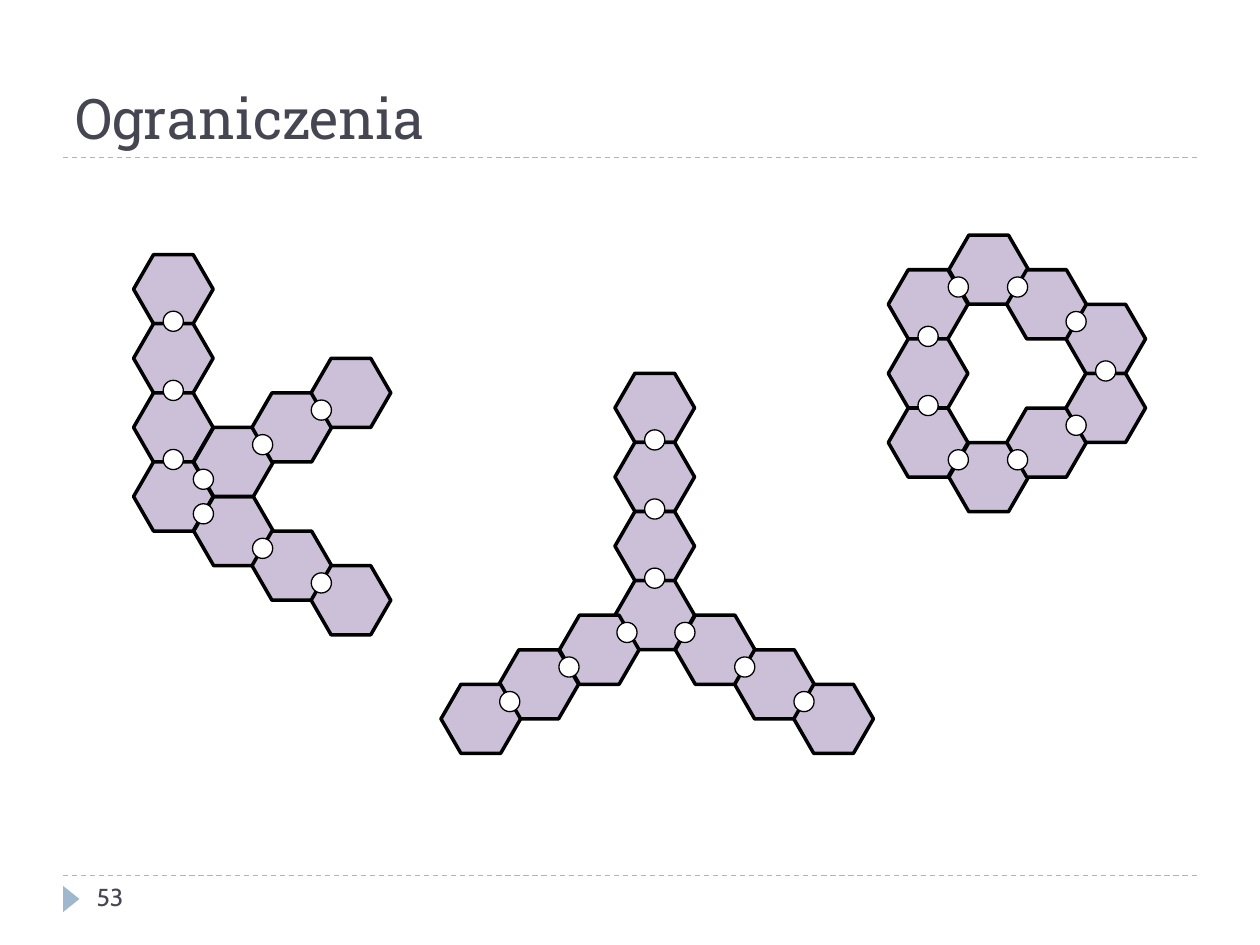
import pptx
import pptx.dml.color
import pptx.enum.dml
import pptx.enum.shapes
import pptx.enum.text
import pptx.oxml
import pptx.util

Pt = pptx.util.Pt
SHAPES = pptx.enum.shapes.MSO_SHAPE
COLORS = {"ink": "464653", "accent": "9FB8CD", "tile": "CCC0D9",
          "outline": "000000", "joint": "FFFFFF"}
TILE_WIDTH, TILE_HEIGHT = 45.5, 39.5
JOINT_SIZE = 11.5
JOINT_LIFT = 1.4

# Each figure: top of row 0, left edge of every column, and chains of joined
# tiles as (column, row), where one row is half a tile high.
FIGURES = [
    (145.5, [76.3, 110.7, 144, 177.8],
     [[(0, 0), (0, 2), (0, 4), (0, 6), (1, 7), (2, 8), (3, 9)],
      [(0, 6), (1, 5), (2, 4), (3, 3)]]),
    (213.3, [252, 285.1, 319.7, 351.4, 385.9, 419.8, 453.6],
     [[(3, 0), (3, 2), (3, 4), (3, 6), (4, 7), (5, 8), (6, 9)],
      [(3, 6), (2, 7), (1, 8), (0, 9)]]),
    (134.4, [507.6, 542.2, 575.3, 609.1],
     [[(1, 0), (0, 1), (0, 3), (0, 5), (1, 6), (2, 5), (3, 4), (3, 2),
       (2, 1), (1, 0)]]),
]


def rgb(name):
    return pptx.dml.color.RGBColor.from_string(COLORS[name])


class SlideBuilder:
    def __init__(self, page):
        self.page = page

    def format_text(self, frame, text, font, size):
        frame.text = text
        for span in frame.paragraphs[0].runs:
            span.font.name = font
            span.font.size = Pt(size)
            span.font.color.rgb = rgb("ink")

    def title(self, text, left, top, width, height):
        box = self.page.shapes.title
        box.left, box.top, box.width, box.height = map(Pt, (left, top, width, height))
        frame = box.text_frame
        self.format_text(frame, text, "Roboto Slab", 32)
        frame.vertical_anchor = pptx.enum.text.MSO_ANCHOR.BOTTOM
        frame.paragraphs[0].alignment = pptx.enum.text.PP_ALIGN.LEFT

    def text(self, text, left, top, width, height):
        box = self.page.shapes.add_textbox(*map(Pt, (left, top, width, height)))
        box.text_frame.word_wrap = True
        self.format_text(box.text_frame, text, "Cabin", 14)

    def rule(self, left, right, y):
        line = self.page.shapes.add_connector(
            pptx.enum.shapes.MSO_CONNECTOR.STRAIGHT, *map(Pt, (left, y, right, y)))
        line.line.color.rgb = rgb("accent")
        line.line.width = Pt(0.75)
        line.line.dash_style = pptx.enum.dml.MSO_LINE.DASH
        line._element.spPr.append(pptx.oxml.parse_xml(
            '<a:effectLst xmlns:a="http://schemas.openxmlformats.org/drawingml/2006/main"/>'))

    def shape(self, parent, kind, center, size, fill, line_width=0):
        """Add a filled shape around its centre; without a line width it has no line."""
        left, top = (middle - side / 2 for middle, side in zip(center, size))
        shape = parent.shapes.add_shape(kind, *map(Pt, (left, top, *size)))
        shape.shadow.inherit = False
        shape.fill.solid()
        shape.fill.fore_color.rgb = rgb(fill)
        if line_width:
            shape.line.color.rgb = rgb("outline")
            shape.line.width = Pt(line_width)
        else:
            shape.line.fill.background()
        return shape

    def figure(self, top, columns, chains):
        """Draw each tile once, then a joint between neighbours along every chain."""
        group = self.page.shapes.add_group_shape()
        centers = {}
        for column, row in dict.fromkeys(cell for chain in chains for cell in chain):
            center = (columns[column] + TILE_WIDTH / 2, top + (row + 1) * TILE_HEIGHT / 2)
            centers[column, row] = center
            tile = self.shape(group, SHAPES.HEXAGON, center,
                              (TILE_WIDTH, TILE_HEIGHT), "tile", 2)
            tile.adjustments[0] = 0.289
        for chain in chains:
            for first, second in zip(chain, chain[1:]):
                x, y = ((a + b) / 2 for a, b in zip(centers[first], centers[second]))
                if first[0] == second[0]:
                    y -= JOINT_LIFT
                self.shape(group, SHAPES.FLOWCHART_CONNECTOR, (x, y),
                           (JOINT_SIZE, JOINT_SIZE), "joint", 0.75)


def main():
    deck = pptx.Presentation()
    deck.slide_width, deck.slide_height = Pt(720), Pt(540)
    page = deck.slides.add_slide(deck.slide_layouts.get_by_name("Title Only"))
    builder = SlideBuilder(page)
    for y in (500.4, 90):
        builder.rule(36, 684, y)
    marker = builder.shape(page, SHAPES.ISOSCELES_TRIANGLE, (40.7, 513.7),
                           (15, 9.4), "accent")
    marker.rotation = 90
    builder.title("Ograniczenia", 36, 12.2, 648, 77.8)
    builder.text("53", 48.2, 500.4, 156.2, 28.8)
    for figure in FIGURES:
        builder.figure(*figure)
    deck.save("out.pptx")


if __name__ == "__main__":
    main()
